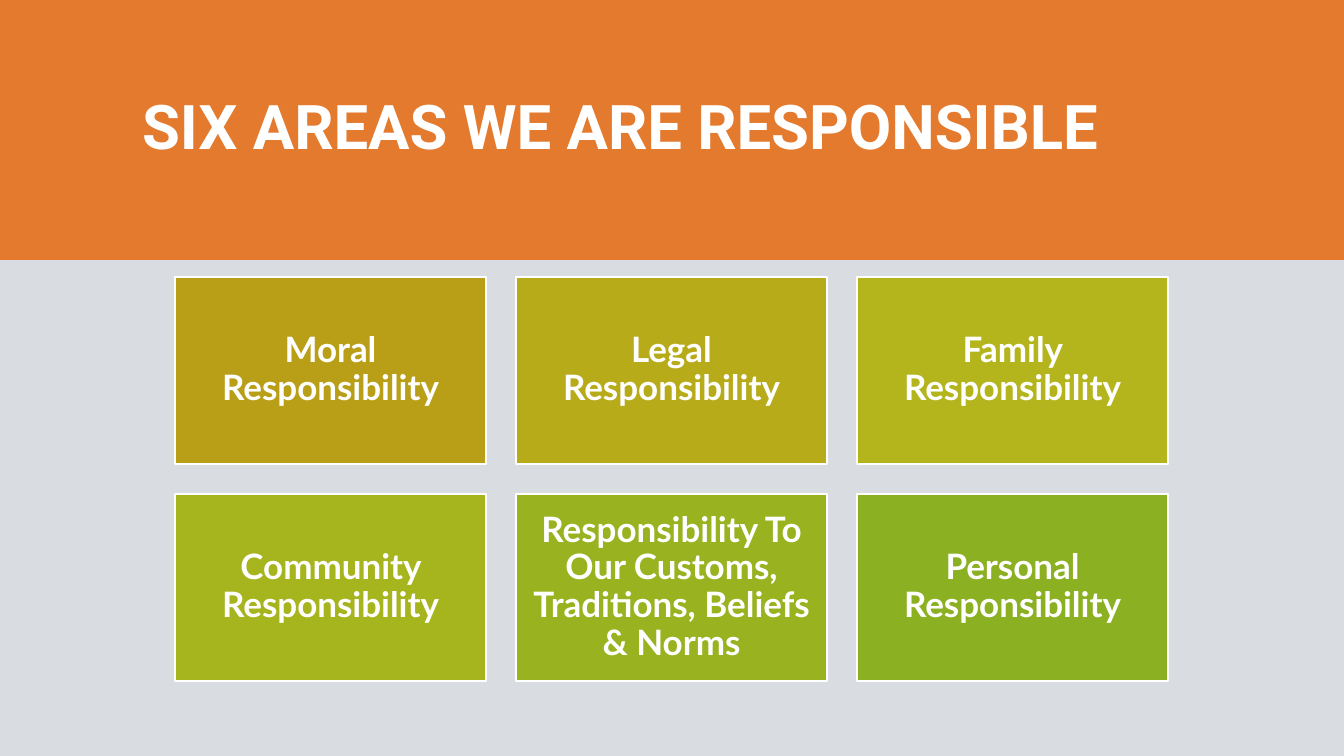
import pptx
import pptx.util
from dataclasses import dataclass
from pptx.dml.color import RGBColor
from pptx.enum.shapes import MSO_SHAPE
from pptx.enum.text import MSO_ANCHOR, MSO_AUTO_SIZE, PP_ALIGN

TITLE = "SIX AREAS WE ARE RESPONSIBLE"
AREAS = [
    ("Moral Responsibility", "B99F18"),
    ("Legal Responsibility", "B7AB1A"),
    ("Family Responsibility", "B4B51C"),
    ("Community Responsibility", "A6B41E"),
    ("Responsibility To Our Customs, Traditions, Beliefs & Norms", "98B220"),
    ("Personal Responsibility", "8BB022"),
]

# Lengths in px
SLIDE = (1344, 756)
BAND = (0, 0, 1344, 260)
TITLE_BOX = (132, 42, 1103, 176)
GRID_LEFT, GRID_TOP = 175, 277
CARD_WIDTH, CARD_HEIGHT = 311, 187
GAP, COLUMNS = 30, 3
INSET = 10


@dataclass(frozen=True)
class Theme:
    background: str = "D9DDE1"
    band: str = "E37A2D"
    light: str = "FFFFFF"
    title_font: str = "Roboto"
    card_font: str = "Lato"
    title_size: int = 44
    card_size: int = 25


THEME = Theme()


def px(length):
    return pptx.util.Emu(round(length * 914400 / 100.8))


def set_all(target, values):
    for name, value in values.items():
        setattr(target, name, value)


def add_rectangle(page, frame, colour):
    box = page.shapes.add_shape(MSO_SHAPE.RECTANGLE, *map(px, frame))
    box.shadow.inherit = False
    box.fill.solid()
    box.fill.fore_color.rgb = RGBColor.from_string(colour)
    box.line.fill.background()
    return box


def write(box, text, font, size, align, **frame_format):
    frame = box.text_frame
    set_all(frame, dict(text=text, word_wrap=True, auto_size=MSO_AUTO_SIZE.NONE,
                        vertical_anchor=MSO_ANCHOR.MIDDLE, **frame_format))
    para = frame.paragraphs[0]
    set_all(para, dict(alignment=align, line_spacing=0.9))
    span = para.runs[0]
    set_all(span.font, dict(name=font, size=pptx.util.Pt(size), bold=True))
    span.font.color.rgb = RGBColor.from_string(THEME.light)


def add_title(page):
    title = page.shapes.title
    set_all(title, dict(zip(("left", "top", "width", "height"), map(px, TITLE_BOX))))
    write(title, TITLE, THEME.title_font, THEME.title_size, PP_ALIGN.LEFT)
    band = add_rectangle(page, BAND, THEME.band)
    title.element.addprevious(band.element)  # the band lies behind the title


def add_cards(page):
    margins = {f"margin_{side}": px(INSET) for side in ("left", "top", "right", "bottom")}
    for index, (text, colour) in enumerate(AREAS):
        row, column = divmod(index, COLUMNS)
        left = GRID_LEFT + column * (CARD_WIDTH + GAP)
        top = GRID_TOP + row * (CARD_HEIGHT + GAP)
        card = add_rectangle(page, (left, top, CARD_WIDTH, CARD_HEIGHT), colour)
        card.line.color.rgb = RGBColor.from_string(THEME.light)
        card.line.width = pptx.util.Pt(1)
        write(card, text, THEME.card_font, THEME.card_size, PP_ALIGN.CENTER, **margins)


def main():
    deck = pptx.Presentation()
    deck.slide_width, deck.slide_height = map(px, SLIDE)
    page = deck.slides.add_slide(deck.slide_layouts.get_by_name("Title Only"))
    page.background.fill.solid()
    page.background.fill.fore_color.rgb = RGBColor.from_string(THEME.background)
    add_title(page)
    add_cards(page)
    deck.save("out.pptx")


if __name__ == "__main__":
    main()
